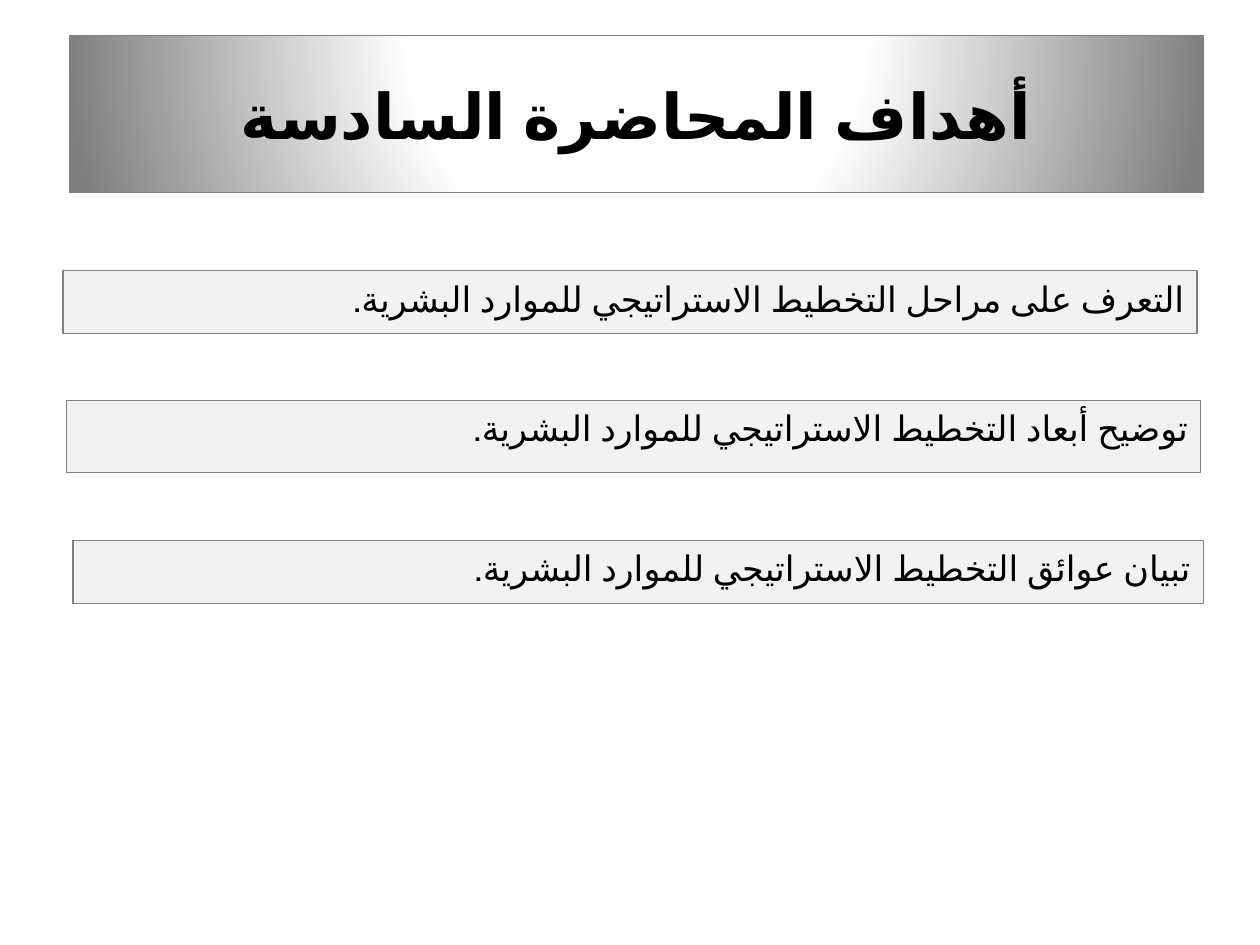
from typing import NamedTuple

from pptx import Presentation
from pptx import util as u
from pptx.dml.color import RGBColor
from pptx.enum import lang, shapes, text
from pptx.oxml import parse_xml
from pptx.oxml.ns import qn

HUES = {"text": "000000", "line": "808080", "goal": "F2F2F2",
        "white": "FFFFFF", "mid": "FEFEFE", "edge": "7F7F7F"}
FONT = "Calibri"


class Box(NamedTuple):
    left: float
    top: float
    width: float
    height: float
    words: str


TITLE = Box(0.55, 0.28, 9, 1.25, "أهداف المحاضرة السادسة")
GOALS = [
    Box(0.5, 2.15, 9, 0.5, "التعرف على مراحل التخطيط الاستراتيجي للموارد البشرية."),
    Box(0.53, 3.18, 9, 0.57, "توضيح أبعاد التخطيط الاستراتيجي للموارد البشرية."),
    Box(0.58, 4.29, 8.97, 0.5, "تبيان عوائق التخطيط الاستراتيجي للموارد البشرية."),
]


def color(name: str) -> RGBColor:
    return RGBColor.from_string(HUES[name])


def draw_box(slide, box: Box, size: int, bold: bool = False):
    """Draw a framed box with one run of text."""
    shape = slide.shapes.add_shape(
        shapes.MSO_SHAPE.RECTANGLE, u.Inches(box.left), u.Inches(box.top),
        u.Inches(box.width), u.Inches(box.height))
    shape.shadow.inherit = False
    shape.fill.solid()
    shape.fill.fore_color.rgb = color("goal")
    shape.line.color.rgb = color("line")
    shape.line.width = u.Pt(0.75)
    shape.text_frame.word_wrap = True
    run = shape.text_frame.paragraphs[0].add_run()
    run.text = box.words
    font = run.font
    font.size, font.bold, font.name = u.Pt(size), bold, FONT
    font.language_id = lang.MSO_LANGUAGE_ID.ARABIC
    font.color.rgb = color("text")
    return shape


def draw_title(slide, box: Box) -> None:
    shape = draw_box(slide, box, 36, bold=True)
    frame = shape.text_frame
    frame.vertical_anchor = text.MSO_ANCHOR.MIDDLE
    frame.paragraphs[0].alignment = text.PP_ALIGN.CENTER
    # Radial fill, centred on the box and stretched past its top and bottom
    stops = "".join(
        f'<a:gs pos="{spot * 1000}"><a:srgbClr val="{HUES[name]}"/></a:gs>'
        for spot, name in ((0, "white"), (40, "mid"), (100, "edge")))
    grad = parse_xml(
        '<a:gradFill xmlns:a="http://schemas.openxmlformats.org/drawingml/2006/main"'
        f' rotWithShape="1"><a:gsLst>{stops}</a:gsLst><a:path path="circle">'
        '<a:fillToRect l="50000" t="-80000" r="50000" b="180000"/>'
        '</a:path></a:gradFill>')
    props = shape._element.spPr
    props.replace(props.find(qn("a:solidFill")), grad)


def draw_goal(slide, box: Box) -> None:
    frame = draw_box(slide, box, 20).text_frame
    frame.vertical_anchor = text.MSO_ANCHOR.TOP
    para = frame.paragraphs[0]
    para.alignment = text.PP_ALIGN.JUSTIFY
    para._p.get_or_add_pPr().set("rtl", "1")


def main() -> None:
    deck = Presentation()
    deck.slide_width, deck.slide_height = u.Inches(10), u.Inches(7.5)
    slide = deck.slides.add_slide(deck.slide_layouts[6])

    # Title band
    draw_title(slide, TITLE)

    # Lecture goals
    for goal in GOALS:
        draw_goal(slide, goal)

    deck.save("out.pptx")


if __name__ == "__main__":
    main()
